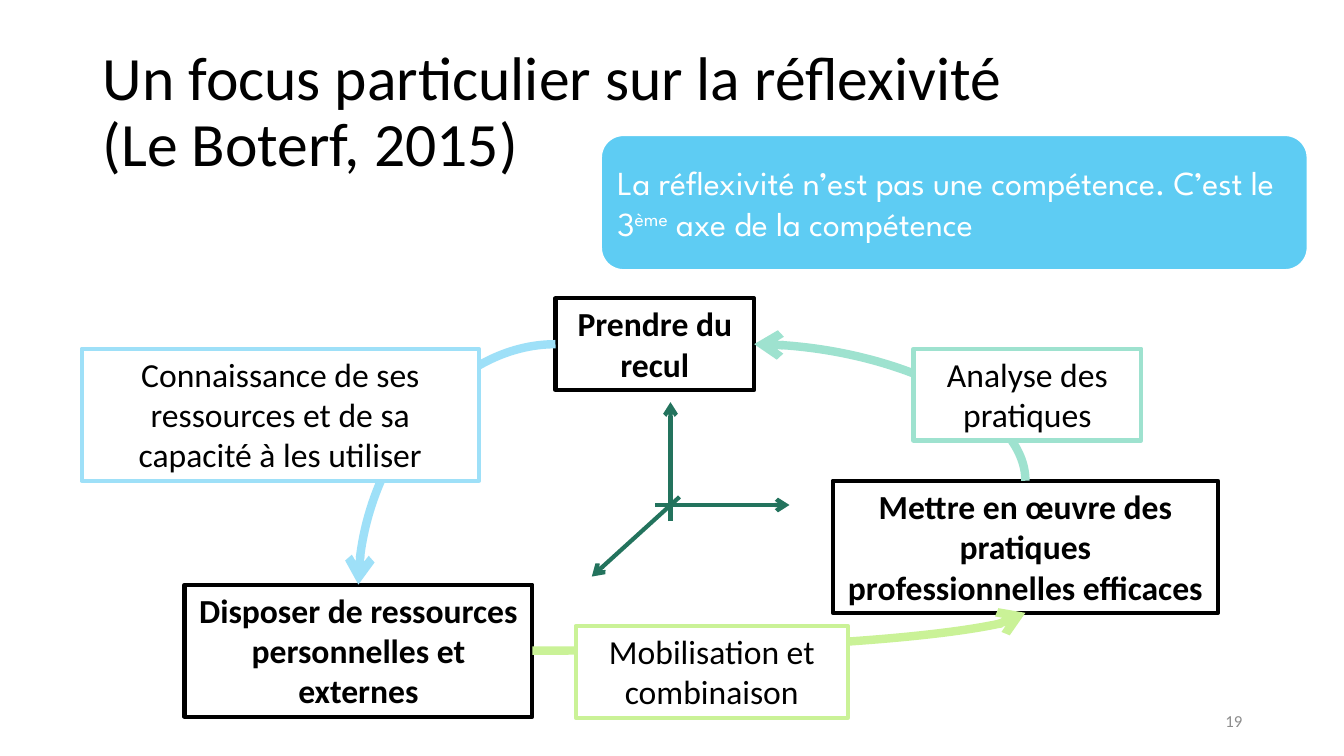
from lxml.etree import SubElement
from pptx import Presentation
from pptx.dml.color import RGBColor
from pptx.enum.shapes import MSO_CONNECTOR as Link, MSO_SHAPE as Shape
from pptx.enum.text import MSO_ANCHOR as Anchor, MSO_AUTO_SIZE as AutoSize, PP_ALIGN as Align
from pptx.oxml.ns import qn
from pptx.util import Inches, Pt

# Content
COLORS = {"black": "000000", "white": "FFFFFF", "grey": "8C8C8C", "callout": "5ECCF3",
          "axis": "23735D", "lime": "CAF297", "mint": "9EE2CF", "sky": "9EE0F8"}
TITLE = "Un focus particulier sur la réflexivité\v(Le Boterf, 2015)"
CALLOUT = [("La réflexivité n’est pas une compétence. C’est le 3", False),
           ("ème", True), (" axe de la compétence", False)]
PAGE_NUMBER = "19"

# Axes: start x, y, end x, y
AXES = [(6.5, 5.01, 7.83, 5.01), (6.74, 4.93, 5.87, 5.72), (6.65, 5.17, 6.65, 3.99)]

# Steps of the cycle: text, (left, top, width, height)
STEPS = {
    "practice": ("Mettre en œuvre des pratiques professionnelles efficaces", (8.26, 4.77, 3.82, 1.31)),
    "resources": ("Disposer de ressources personnelles et externes", (1.83, 5.8, 3.45, 1.31)),
    "distance": ("Prendre du recul", (5.51, 2.96, 1.97, 0.91)),
}
# Links: start step, side, end step, side, colour (0 top, 1 left, 2 bottom, 3 right)
LINKS = [("resources", 3, "practice", 2, "lime"),
         ("practice", 0, "distance", 3, "mint"),
         ("distance", 1, "resources", 0, "sky")]
LABELS = [("Mobilisation et combinaison", (5.71, 6.21, 2.7, 0.91), "lime"),
          ("Analyse des pratiques", (9.06, 3.46, 2.26, 0.91), "mint"),
          ("Connaissance de ses ressources et de sa capacité à les utiliser",
           (0.81, 3.46, 3.94, 1.31), "sky")]


def rgb(name):
    return RGBColor.from_string(COLORS[name])


def set_font(paragraph, size, color="black", name="Calibri", bold=False):
    font = paragraph.font
    font.name, font.size, font.bold = name, Pt(size), bold
    font.color.rgb = rgb(color)


def add_block(kind, box, line, weight, fill=None):
    block = slide.shapes.add_shape(kind, *map(Inches, box))
    block.shadow.inherit = False
    if fill:
        block.fill.solid()
        block.fill.fore_color.rgb = rgb(fill)
    else:
        block.fill.background()
    block.line.color.rgb = rgb(line)
    block.line.width = Pt(weight)
    block.text_frame.word_wrap = True
    return block


def add_box(text, box, line, fill=None, bold=False):
    block = add_block(Shape.RECTANGLE, box, line, 3, fill)
    frame = block.text_frame
    frame.auto_size = AutoSize.SHAPE_TO_FIT_TEXT
    frame.vertical_anchor = Anchor.TOP
    frame.text = text
    frame.paragraphs[0].alignment = Align.CENTER
    set_font(frame.paragraphs[0], 24, bold=bold)
    return block


def add_arrow(kind, ends, color, weight):
    arrow = slide.shapes.add_connector(kind, *map(Inches, ends))
    arrow.line.color.rgb = rgb(color)
    arrow.line.width = Pt(weight)
    SubElement(arrow.line._get_or_add_ln(), qn("a:tailEnd"), type="arrow")
    SubElement(arrow._element.spPr, qn("a:effectLst"))
    return arrow


def bend_once(arrow, starts_vertical):
    """Make the curve a quarter turn; turn its frame if it leaves upwards."""
    properties = arrow._element.spPr
    properties.find(qn("a:prstGeom")).set("prst", "curvedConnector2")
    if starts_vertical:
        left, top, width, height = arrow.left, arrow.top, arrow.width, arrow.height
        arrow.left, arrow.top = left + (width - height) // 2, top + (height - width) // 2
        arrow.width, arrow.height = height, width
        frame = properties.find(qn("a:xfrm"))
        frame.set("rot", str(270 * 60000))
        frame.set("flipH", "0")
        frame.set("flipV", "1")


deck = Presentation()
deck.slide_width, deck.slide_height = Inches(13.33), Inches(7.5)
slide = deck.slides.add_slide(deck.slide_layouts[5])

# Title
title = slide.shapes.title
title.left, title.top, title.width, title.height = map(Inches, (0.92, 0.4, 11.5, 1.45))
title.text_frame.text = TITLE
title.text_frame.auto_size = AutoSize.NONE
title.text_frame.vertical_anchor = Anchor.MIDDLE
heading = title.text_frame.paragraphs[0]
heading.alignment, heading.line_spacing = Align.LEFT, 0.9
set_font(heading, 44)

# Page number
number = slide.shapes.add_textbox(*map(Inches, (9.42, 6.95, 3, 0.4))).text_frame
number.word_wrap = True
number.vertical_anchor = Anchor.MIDDLE
number.text = PAGE_NUMBER
number.paragraphs[0].alignment = Align.RIGHT
set_font(number.paragraphs[0], 12, "grey")

# Callout
callout = add_block(Shape.ROUNDED_RECTANGLE, (5.96, 1.34, 7.01, 1.34), "white", 1.5, "callout")
message = callout.text_frame.paragraphs[0]
message.alignment = Align.LEFT
set_font(message, 24, "white", "League Spartan")
for text, raised in CALLOUT:
    run = message.add_run()
    run.text = text
    if raised:
        run.font._element.set("baseline", "30000")

# Three axes
for ends in AXES:
    add_arrow(Link.STRAIGHT, ends, "axis", 3)

# Cycle: steps, curved links, then the labels over the links
steps = {key: add_box(text, box, "black", bold=True) for key, (text, box) in STEPS.items()}
for start, start_side, end, end_side, color in LINKS:
    curve = add_arrow(Link.CURVE, (0, 0, 1, 1), color, 6)
    curve.begin_connect(steps[start], start_side)
    curve.end_connect(steps[end], end_side)
    bend_once(curve, start_side in (0, 2))
for text, box, color in LABELS:
    add_box(text, box, color, "white")

deck.save("out.pptx")
